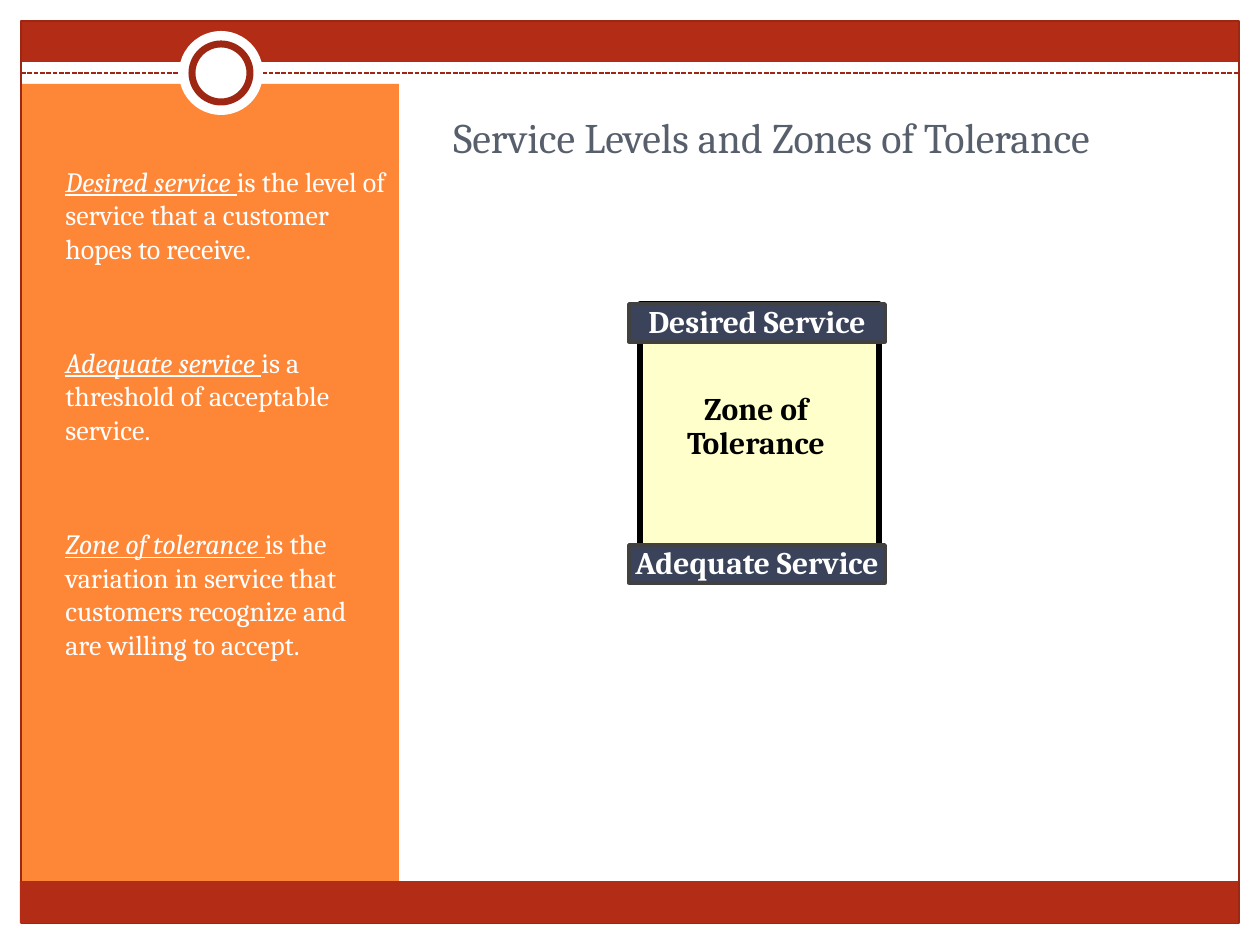
"""Build the slide on service levels and zones of tolerance."""

from dataclasses import dataclass
from typing import Any, Optional

import pptx
import pptx.dml.color
import pptx.enum.dml
import pptx.enum.shapes
import pptx.enum.text
import pptx.oxml.ns
import pptx.util
import lxml.etree

EMU_PER_PX = 914400 / 126
FONT = "Cambria"
COLORS = {
    "brick": "B32C16",
    "dark_red": "9E2713",
    "orange": "FE8637",
    "white": "FFFFFF",
    "slate": "575F6D",
    "navy": "3B435B",
    "charcoal": "414141",
    "cream": "FFFFCC",
    "black": "000000",
}
SHAPE_TYPES = pptx.enum.shapes.MSO_SHAPE


@dataclass(frozen=True)
class Box:
    left: int
    top: int
    width: int
    height: int


@dataclass(frozen=True)
class Panel:
    box: Box
    fill: Optional[str] = None
    line: Optional[str] = None
    line_width: float = 0
    kind: Any = SHAPE_TYPES.RECTANGLE
    label: str = ""
    label_color: str = "white"


@dataclass(frozen=True)
class Definition:
    term: str
    meaning: str


DASHED_RULE = Box(21, 73, 1218, 0)
FRAME_PANELS = [
    Panel(Box(21, 21, 1218, 41), "brick"),
    Panel(Box(21, 84, 378, 809), "orange"),
    Panel(Box(21, 21, 1218, 902), None, "dark_red", 0.75),
    Panel(Box(179, 31, 84, 84), "white", kind=SHAPE_TYPES.OVAL),
    Panel(Box(192, 44, 58, 58), "white", "dark_red", 4, SHAPE_TYPES.OVAL),
    Panel(Box(20, 881, 1218, 42), "brick"),
]
ZONE_PANELS = [
    Panel(Box(640, 304, 239, 274), "cream", "black", 3),
    Panel(Box(629, 545, 256, 38), "navy", "charcoal", 2, label="Adequate Service"),
    Panel(Box(629, 304, 256, 38), "navy", "charcoal", 2, label="Desired Service"),
    Panel(Box(651, 388, 210, 79), "cream", label="Zone of\nTolerance", label_color="black"),
]
TITLE = "Service Levels and Zones of Tolerance"
TITLE_BOX = Box(441, 105, 756, 126)
DEFINITIONS_BOX = Box(53, 158, 346, 703)
DEFINITIONS = [
    Definition("Desired service", "is the level of service that a customer hopes to receive."),
    Definition("Adequate service", "is a threshold of acceptable service."),
    Definition(
        "Zone of tolerance",
        "is the variation in service that customers recognize and are willing to accept.",
    ),
]


def px(length: int) -> pptx.util.Emu:
    return pptx.util.Emu(round(length * EMU_PER_PX))


def place(box: Box) -> tuple:
    return px(box.left), px(box.top), px(box.width), px(box.height)


def rgb(name: str) -> pptx.dml.color.RGBColor:
    return pptx.dml.color.RGBColor.from_string(COLORS[name])


def style_font(font: Any, size: int, color: str) -> None:
    font.name = FONT
    font.size = pptx.util.Pt(size)
    font.color.rgb = rgb(color)


def write_label(text_frame: Any, panel: Panel) -> None:
    text_frame.margin_left = text_frame.margin_right = px(5)
    text_frame.margin_top = text_frame.margin_bottom = px(1)
    text_frame.word_wrap = False
    text_frame.vertical_anchor = pptx.enum.text.MSO_ANCHOR.MIDDLE
    text_frame.text = panel.label
    for paragraph in text_frame.paragraphs:
        paragraph.alignment = pptx.enum.text.PP_ALIGN.CENTER
        paragraph.line_spacing = 0.9
        for run in paragraph.runs:
            style_font(run.font, 18, panel.label_color)
            run.font.bold = True


def draw_panel(slide: Any, panel: Panel) -> None:
    shape = slide.shapes.add_shape(panel.kind, *place(panel.box))
    shape.shadow.inherit = False
    if panel.fill:
        shape.fill.solid()
        shape.fill.fore_color.rgb = rgb(panel.fill)
    else:
        shape.fill.background()
    if panel.line:
        shape.line.color.rgb = rgb(panel.line)
        shape.line.width = pptx.util.Pt(panel.line_width)
    else:
        shape.line.fill.background()
    if panel.label:
        write_label(shape.text_frame, panel)


def draw_dashed_rule(slide: Any, box: Box) -> None:
    connector = slide.shapes.add_connector(
        pptx.enum.shapes.MSO_CONNECTOR.STRAIGHT,
        px(box.left), px(box.top), px(box.left + box.width), px(box.top + box.height),
    )
    connector.line.color.rgb = rgb("dark_red")
    connector.line.width = pptx.util.Pt(0.9)
    connector.line.dash_style = pptx.enum.dml.MSO_LINE.SQUARE_DOT
    lxml.etree.SubElement(connector._element.spPr, pptx.oxml.ns.qn("a:effectLst"))


def add_text_frame(slide: Any, box: Box) -> Any:
    text_frame = slide.shapes.add_textbox(*place(box)).text_frame
    text_frame.word_wrap = True
    return text_frame


def draw_title(slide: Any) -> None:
    text_frame = add_text_frame(slide, TITLE_BOX)
    text_frame.text = TITLE
    style_font(text_frame.paragraphs[0].runs[0].font, 24, "slate")


def draw_definitions(slide: Any) -> None:
    text_frame = add_text_frame(slide, DEFINITIONS_BOX)
    for index, definition in enumerate(DEFINITIONS):
        paragraph = text_frame.add_paragraph() if index else text_frame.paragraphs[0]
        paragraph.space_before = pptx.util.Pt(46 if index else 0)
        pieces = [(definition.term, True, True), (" ", False, True), (definition.meaning, False, False)]
        for text, italic, underline in pieces:
            run = paragraph.add_run()
            run.text = text
            style_font(run.font, 16, "white")
            run.font.italic = italic
            run.font.underline = underline


def main() -> None:
    presentation = pptx.Presentation()
    presentation.slide_width = px(1260)
    presentation.slide_height = px(945)
    slide = presentation.slides.add_slide(presentation.slide_layouts[6])
    draw_dashed_rule(slide, DASHED_RULE)
    for panel in FRAME_PANELS:
        draw_panel(slide, panel)
    draw_title(slide)
    draw_definitions(slide)
    for panel in ZONE_PANELS:
        draw_panel(slide, panel)
    presentation.save("out.pptx")


if __name__ == "__main__":
    main()
